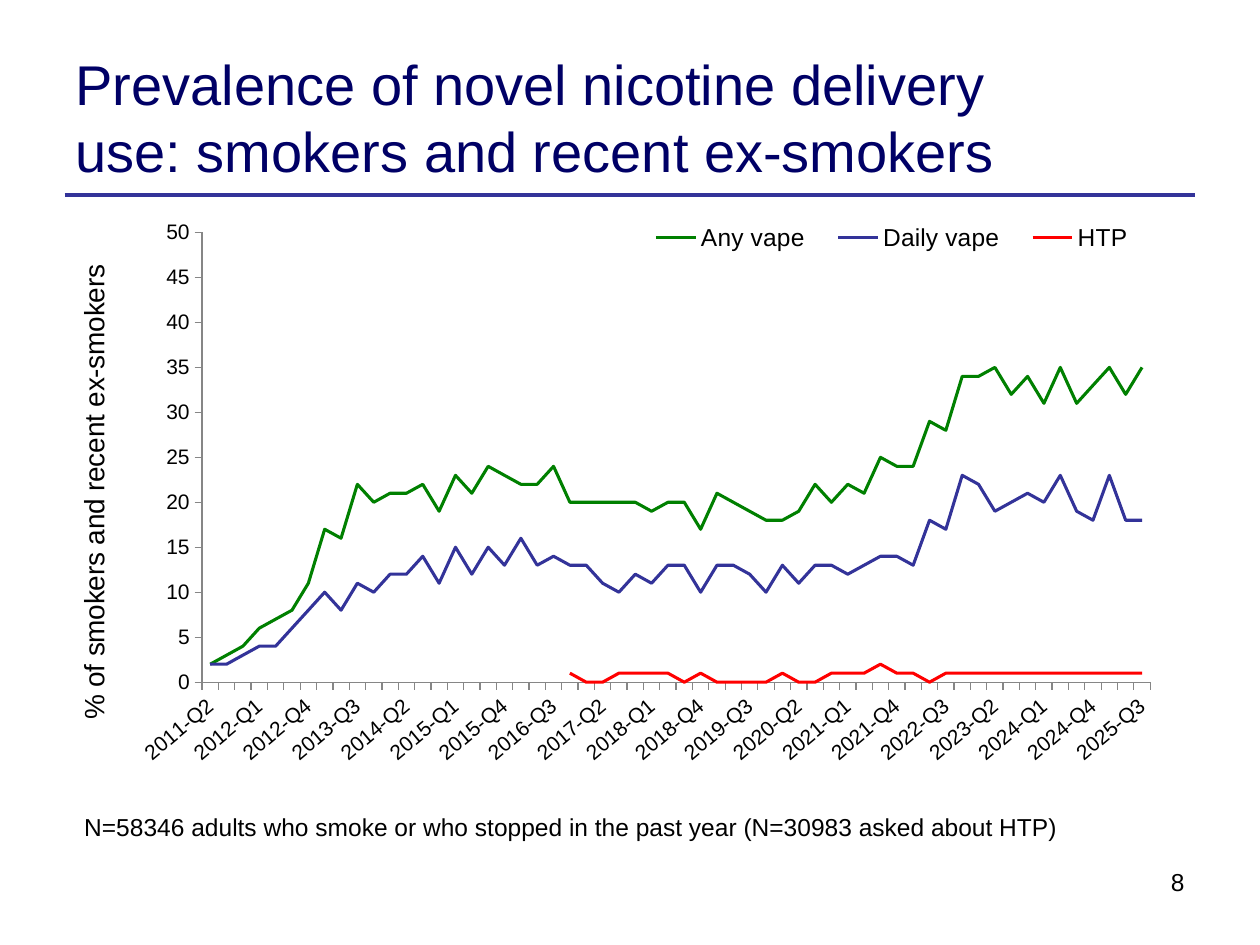
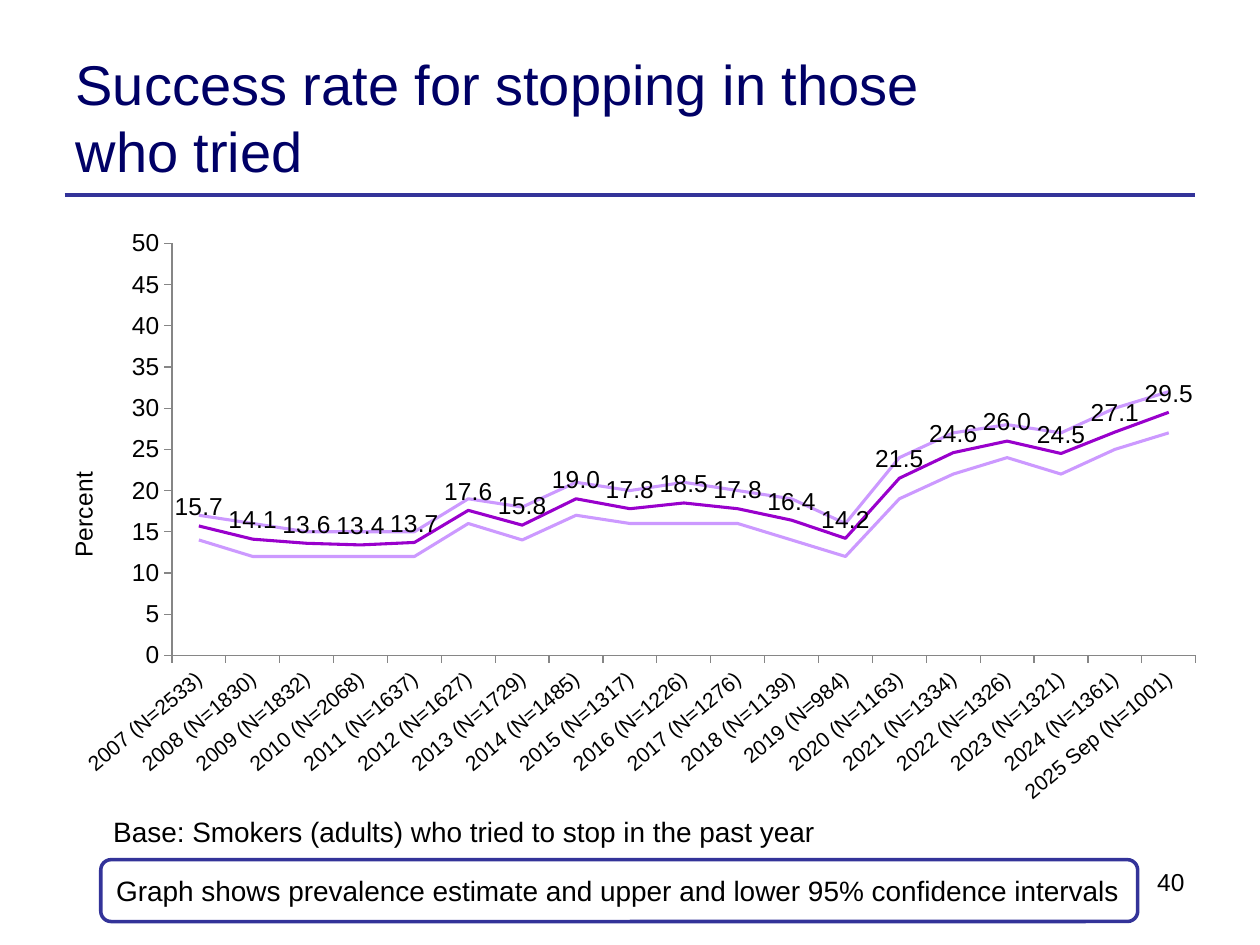
import pptx
import pptx.chart.data
import pptx.dml.color
import pptx.enum.chart
import pptx.enum.shapes
import pptx.enum.text
import pptx.oxml
import pptx.oxml.ns
import pptx.util

HUES = {"title": "000066", "rule": "333399", "text": "000000", "white": "FFFFFF",
        "axis": "868686", "green": "008000", "red": "FF0000",
        "plum": "9900CC", "lilac": "CC99FF"}
FACE = "Arial"
ALIGN = pptx.enum.text.PP_ALIGN
KIND = pptx.enum.chart
rgb = pptx.dml.color.RGBColor.from_string
qn = pptx.oxml.ns.qn

deck = pptx.Presentation()
deck.slide_width = pptx.util.Inches(10)
deck.slide_height = pptx.util.Inches(7.5)
COL = deck.slide_width / 100
ROW = deck.slide_height / 100


def area(left, top, wide, high):
    """Turn columns and rows of a 100 by 100 grid into slide lengths."""
    return int(left * COL), int(top * ROW), int(wide * COL), int(high * ROW)


def write(text, shape, size=14, hue="text", align=ALIGN.LEFT, mid=False, wrap=True):
    frame = shape.text_frame
    frame.word_wrap = wrap
    frame.auto_size = pptx.enum.text.MSO_AUTO_SIZE.NONE
    anchor = pptx.enum.text.MSO_ANCHOR
    frame.vertical_anchor = anchor.MIDDLE if mid else anchor.TOP
    frame.text = text
    para = frame.paragraphs[0]
    para.alignment = align
    para.font.size = pptx.util.Pt(size)
    para.font.name = FACE
    para.font.color.rgb = rgb(HUES[hue])


# Quarters from 2011-Q2 to 2025-Q3
quarters = [f"{year}-Q{part}" for year in range(2011, 2026) for part in range(1, 5)][1:-1]
sizes = [2533, 1830, 1832, 2068, 1637, 1627, 1729, 1485, 1317, 1226, 1276, 1139,
         984, 1163, 1334, 1326, 1321, 1361, 1001]
years = [f"{year}{' Sep' if year == 2025 else ''} (N={size})"
         for year, size in enumerate(sizes, 2007)]

pages = [
    {"title": "Prevalence of novel nicotine delivery use: smokers and recent ex-smokers",
     "wide": 78.9, "number": "8", "area": (5, 20.65, 92, 62.8), "cats": quarters,
     "axis": "% of smokers and recent ex-smokers", "name": 16, "tick": 12, "skip": 3,
     "plot": (0.12, 0.063, 0.818, 0.758), "spot": (0.007, 0.109),
     "legend": (0.49, 0.042, 0.45, 0.06), "labels": False,
     "lines": [
         ("Any vape", "green",
          [2, 3, 4, 6, 7, 8, 11, 17, 16, 22, 20, 21, 21, 22, 19, 23, 21, 24, 23, 22,
           22, 24, 20, 20, 20, 20, 20, 19, 20, 20, 17, 21, 20, 19, 18, 18, 19, 22, 20, 22,
           21, 25, 24, 24, 29, 28, 34, 34, 35, 32, 34, 31, 35, 31, 33, 35, 32, 35]),
         ("Daily vape", "rule",
          [2, 2, 3, 4, 4, 6, 8, 10, 8, 11, 10, 12, 12, 14, 11, 15, 12, 15, 13, 16,
           13, 14, 13, 13, 11, 10, 12, 11, 13, 13, 10, 13, 13, 12, 10, 13, 11, 13, 13, 12,
           13, 14, 14, 13, 18, 17, 23, 22, 19, 20, 21, 20, 23, 19, 18, 23, 18, 18]),
         ("HTP", "red",
          [None] * 22 + [1, 0, 0, 1, 1, 1, 1, 0, 1, 0, 0, 0, 0, 1, 0, 0, 1, 1, 1, 2,
                         1, 1, 0] + [1] * 13)]},
    {"title": "Success rate for stopping in those who tried",
     "wide": 78.1, "number": "40", "area": (5, 23.39, 91, 62.13), "cats": years,
     "axis": "Percent", "name": 14, "tick": 14, "skip": None,
     "plot": (0.095, 0.038, 0.893, 0.702), "spot": (0, 0.42),
     "legend": None, "labels": True,
     "lines": [
         ("Series 1", "plum",
          [15.7, 14.1, 13.6, 13.4, 13.7, 17.6, 15.8, 19, 17.8, 18.5, 17.8, 16.4,
           14.2, 21.5, 24.6, 26, 24.5, 27.1, 29.5]),
         ("Series 2", "lilac",
          [17, 16, 15, 15, 15, 19, 18, 21, 20, 21, 20, 19, 16, 24, 27, 28, 27, 30, 32]),
         ("Series 3", "lilac",
          [14, 12, 12, 12, 12, 16, 14, 17, 16, 16, 16, 14, 12, 19, 22, 24, 22, 25, 27])]},
]

layout = deck.slide_layouts[5]
slides = []
for page in pages:
    slide = deck.slides.add_slide(layout)
    slides.append(slide)

    # Title and page number
    title = slide.shapes.title
    title.left, title.top, title.width, title.height = area(5, 4, page["wide"], 16.67)
    write(page["title"], title, size=32, hue="title", mid=True)
    number = slide.shapes.add_textbox(*area(67.3, 91.07, 27.7, 6.93))
    write(page["number"], number, align=ALIGN.RIGHT)

    # Line chart
    data = pptx.chart.data.CategoryChartData()
    data.categories = page["cats"]
    for name, hue, values in page["lines"]:
        data.add_series(name, values)
    chart = slide.shapes.add_chart(
        KIND.XL_CHART_TYPE.LINE, *area(*page["area"]), data).chart
    chart.has_title = False
    chart.font.name = FACE
    chart.font.size = pptx.util.Pt(18)
    chart.font.color.rgb = rgb(HUES["text"])
    chart.plots[0].vary_by_categories = False
    for series, (name, hue, values) in zip(chart.plots[0].series, page["lines"]):
        series.smooth = False
        series.format.line.color.rgb = rgb(HUES[hue])
        series.format.line.width = pptx.util.Pt(1.75)

    # Axes
    down, across = chart.value_axis, chart.category_axis
    for axis, size in ((down, page["tick"]), (across, 12)):
        axis.has_major_gridlines = False
        axis.major_tick_mark = KIND.XL_TICK_MARK.OUTSIDE
        axis.minor_tick_mark = KIND.XL_TICK_MARK.NONE
        axis.format.line.color.rgb = rgb(HUES["axis"])
        axis.tick_labels.font.size = pptx.util.Pt(size)
    down.minimum_scale, down.maximum_scale, down.major_unit = 0, 50, 5
    down.has_title = True
    down.axis_title.text_frame.text = page["axis"]
    font = down.axis_title.text_frame.paragraphs[0].font
    font.size, font.bold, font.name = pptx.util.Pt(page["name"]), False, FACE

    # Slanted category labels, upright axis title, label steps
    root = chart.element
    root.xpath(".//c:catAx/c:txPr/a:bodyPr")[0].set("rot", "-2400000")
    root.xpath(".//c:valAx/c:title//a:bodyPr")[0].set("rot", "-5400000")
    if page["skip"]:
        step = pptx.oxml.parse_xml(
            f'<c:tickLblSkip {pptx.oxml.ns.nsdecls("c")} val="{page["skip"]}"/>')
        root.xpath(".//c:catAx/c:noMultiLvlLbl")[0].addprevious(step)

    # Legend and value labels
    chart.has_legend = page["legend"] is not None
    if chart.has_legend:
        chart.legend.position = KIND.XL_LEGEND_POSITION.TOP
        chart.legend.include_in_layout = False
        chart.legend.font.size = pptx.util.Pt(14)
    if page["labels"]:
        labels = chart.plots[0].series[0].data_labels
        labels.show_value = True
        labels.position = KIND.XL_LABEL_POSITION.ABOVE
        labels.number_format = "#,##0.0"
        labels.number_format_is_linked = False
        labels.font.size = pptx.util.Pt(14)

    # Fixed places of plot, axis title and legend, as shares of the chart
    for tag, spot, index in (("c:plotArea", page["plot"], 0),
                             ("c:valAx/c:title", page["spot"], 1),
                             ("c:legend", page["legend"], 1)):
        if spot is None:
            continue
        part = root.xpath(".//" + tag)[0]
        for old in part.findall(qn("c:layout")):
            part.remove(old)
        inner = '<c:layoutTarget val="inner"/>' if tag == "c:plotArea" else ""
        modes = '<c:xMode val="edge"/><c:yMode val="edge"/>'
        marks = "".join(f'<c:{key} val="{share}"/>' for key, share in zip("xywh", spot))
        part.insert(index, pptx.oxml.parse_xml(
            f'<c:layout {pptx.oxml.ns.nsdecls("c")}><c:manualLayout>'
            f'{inner}{modes}{marks}</c:manualLayout></c:layout>'))

# Rule under the title, shared through the layout
left, top, wide, high = area(5.13, 20.63, 89.74, 0)
rule = slides[0].shapes.add_connector(
    pptx.enum.shapes.MSO_CONNECTOR.STRAIGHT, left, top, left + wide, top)
rule.line.color.rgb = rgb(HUES["rule"])
rule.line.width = pptx.util.Pt(2.25)
rule.element.spPr.append(pptx.oxml.parse_xml(
    f'<a:effectLst {pptx.oxml.ns.nsdecls("a")}/>'))
layout.shapes.element.append(rule.element)

# Sample note on the first slide
note = slides[0].shapes.add_textbox(*area(5.7, 85.27, 85.5, 7.6))
write("N=58346 adults who smoke or who stopped in the past year (N=30983 asked about HTP)",
      note)

# Framed remark and base on the second slide
frame = slides[1].shapes.add_shape(
    pptx.enum.shapes.MSO_SHAPE.ROUNDED_RECTANGLE, *area(8, 90.97, 82.3, 6.55))
frame.shadow.inherit = False
frame.fill.solid()
frame.fill.fore_color.rgb = rgb(HUES["white"])
frame.line.color.rgb = rgb(HUES["rule"])
frame.line.width = pptx.util.Pt(2)
write("Graph shows prevalence estimate and upper and lower 95% confidence intervals",
      frame, size=16, mid=True)
base = slides[1].shapes.add_textbox(*area(8, 85.53, 58.5, 4.93))
write("Base: Smokers (adults) who tried to stop in the past year",
      base, size=16, wrap=False)

deck.save("out.pptx")
